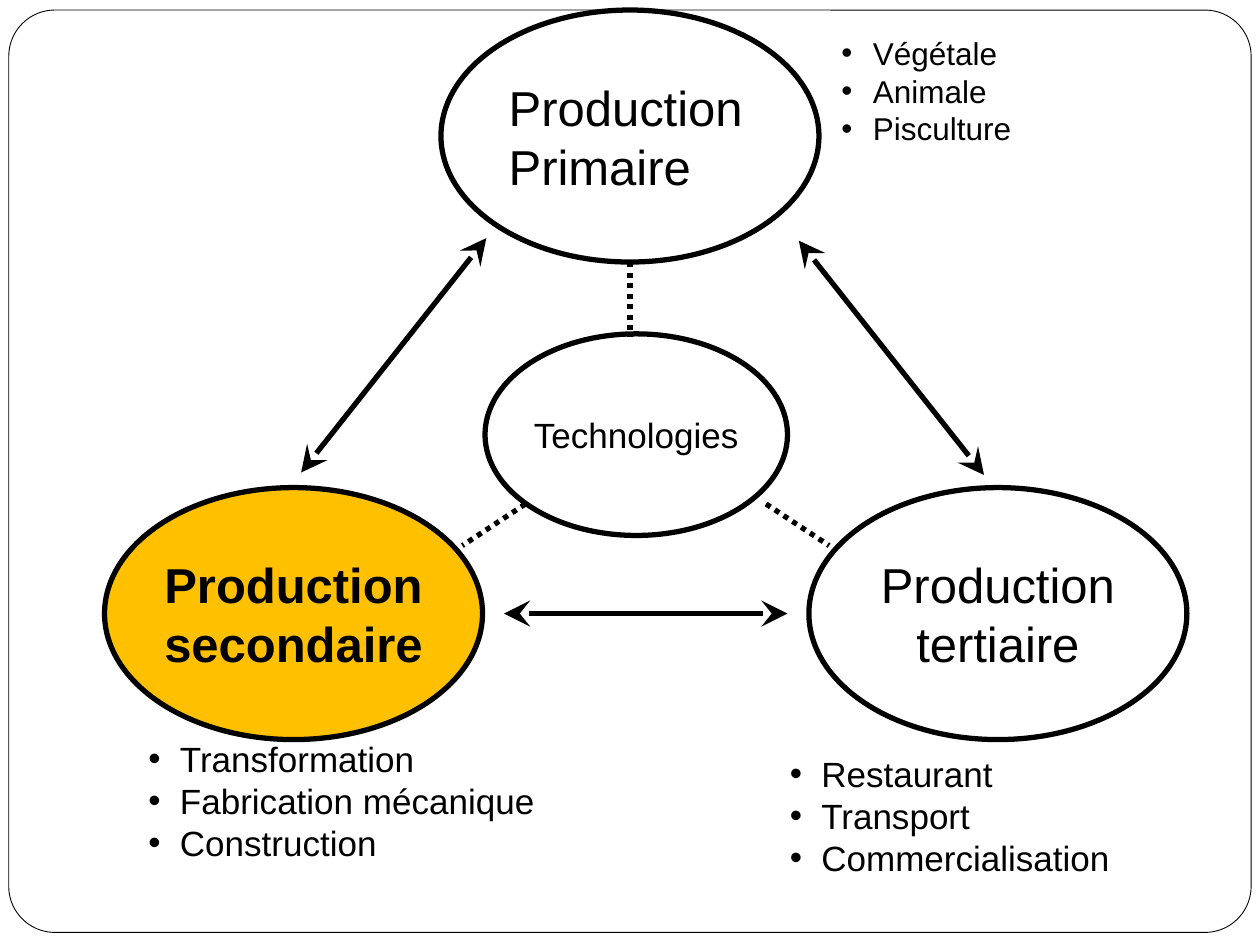
from lxml.etree import SubElement
from pptx import Presentation
from pptx.dml.color import RGBColor
from pptx.enum.dml import MSO_LINE
from pptx.enum.shapes import MSO_CONNECTOR, MSO_SHAPE
from pptx.enum.text import MSO_ANCHOR, MSO_AUTO_SIZE, PP_ALIGN
from pptx.oxml.ns import qn
from pptx.util import Pt

PX = 9144  # 100 px to the inch
BLACK, WHITE, AMBER = "000000", "FFFFFF", "FFC000"


def color(value):
    return RGBColor.from_string(value)


def write_lines(text_frame, lines, size, align=PP_ALIGN.LEFT, bold=False, bullets=False):
    for index, line in enumerate(lines):
        paragraph = text_frame.paragraphs[0] if index == 0 else text_frame.add_paragraph()
        paragraph.text = line
        paragraph.alignment = align
        if bullets:
            properties = paragraph._p.get_or_add_pPr()
            properties.set("marL", str(25 * PX))
            properties.set("indent", str(-25 * PX))
            SubElement(properties, qn("a:buFont"), typeface="Arial")
            SubElement(properties, qn("a:buChar"), char="•")
        paragraph.font.name = "Arial"
        paragraph.font.size = Pt(size)
        paragraph.font.bold = bold
        paragraph.font.color.rgb = color(BLACK)


presentation = Presentation()
presentation.slide_width, presentation.slide_height = 1000 * PX, 750 * PX
slide = presentation.slides.add_slide(presentation.slide_layouts[6])
shapes = slide.shapes

# Rounded frame
frame = shapes.add_shape(MSO_SHAPE.ROUNDED_RECTANGLE, 7 * PX, 8 * PX, 986 * PX, 732 * PX)
frame.adjustments[0] = 0.05
frame.shadow.inherit = False
frame.fill.solid()
frame.fill.fore_color.rgb = color(WHITE)
frame.line.color.rgb = color(BLACK)
frame.line.width = Pt(0.5)

# Production sectors around the technologies
ellipses = [
    (83, 387, 300, 200, ["Production", "secondaire"], 28, PP_ALIGN.CENTER, AMBER),
    (642, 387, 300, 200, ["Production", "tertiaire"], 28, PP_ALIGN.CENTER, None),
    (350, 8, 300, 200, ["Production", "Primaire"], 28, PP_ALIGN.LEFT, None),
    (385, 265, 240, 160, ["Technologies"], 20, PP_ALIGN.CENTER, None),
]
for left, top, width, height, lines, size, align, fill in ellipses:
    ellipse = shapes.add_shape(MSO_SHAPE.OVAL, left * PX, top * PX, width * PX, height * PX)
    ellipse.shadow.inherit = False
    if fill:
        ellipse.fill.solid()
        ellipse.fill.fore_color.rgb = color(fill)
    else:
        ellipse.fill.background()
    ellipse.line.color.rgb = color(BLACK)
    ellipse.line.width = Pt(3)
    ellipse.text_frame.word_wrap = False
    ellipse.text_frame.vertical_anchor = MSO_ANCHOR.MIDDLE
    write_lines(ellipse.text_frame, lines, size, align, bold=fill is not None)

# Examples for each sector
example_lists = [
    (617, 592, 383, 111, ["Restaurant", "Transport", "Commercialisation"], 20),
    (108, 580, 350, 145, ["Transformation", "Fabrication mécanique", "Construction"], 20),
    (658, 22, 342, 170, ["Végétale", "Animale", "Pisculture"], 18),
]
for left, top, width, height, lines, size in example_lists:
    text_box = shapes.add_textbox(left * PX, top * PX, width * PX, height * PX)
    text_box.text_frame.word_wrap = True
    text_box.text_frame.auto_size = MSO_AUTO_SIZE.SHAPE_TO_FIT_TEXT
    write_lines(text_box.text_frame, lines, size, bullets=True)

# Two-way arrows between sectors, dotted links to the technologies
links = [
    (239, 375, 386, 189, False),
    (400, 487, 625, 487, False),
    (781, 377, 634, 191, False),
    (500, 208, 500, 267, True),
    (417, 400, 367, 433, True),
    (608, 400, 658, 433, True),
]
for start_x, start_y, end_x, end_y, dotted in links:
    link = shapes.add_connector(
        MSO_CONNECTOR.STRAIGHT, start_x * PX, start_y * PX, end_x * PX, end_y * PX)
    link.line.color.rgb = color(BLACK)
    link.line.width = Pt(3)
    if dotted:
        link.line.dash_style = MSO_LINE.ROUND_DOT  # written as sysDot
    else:
        for end in ("a:headEnd", "a:tailEnd"):
            SubElement(link.line._get_or_add_ln(), qn(end), type="stealth", w="lg", len="lg")
    SubElement(link._element.spPr, qn("a:effectLst"))

presentation.save("out.pptx")
